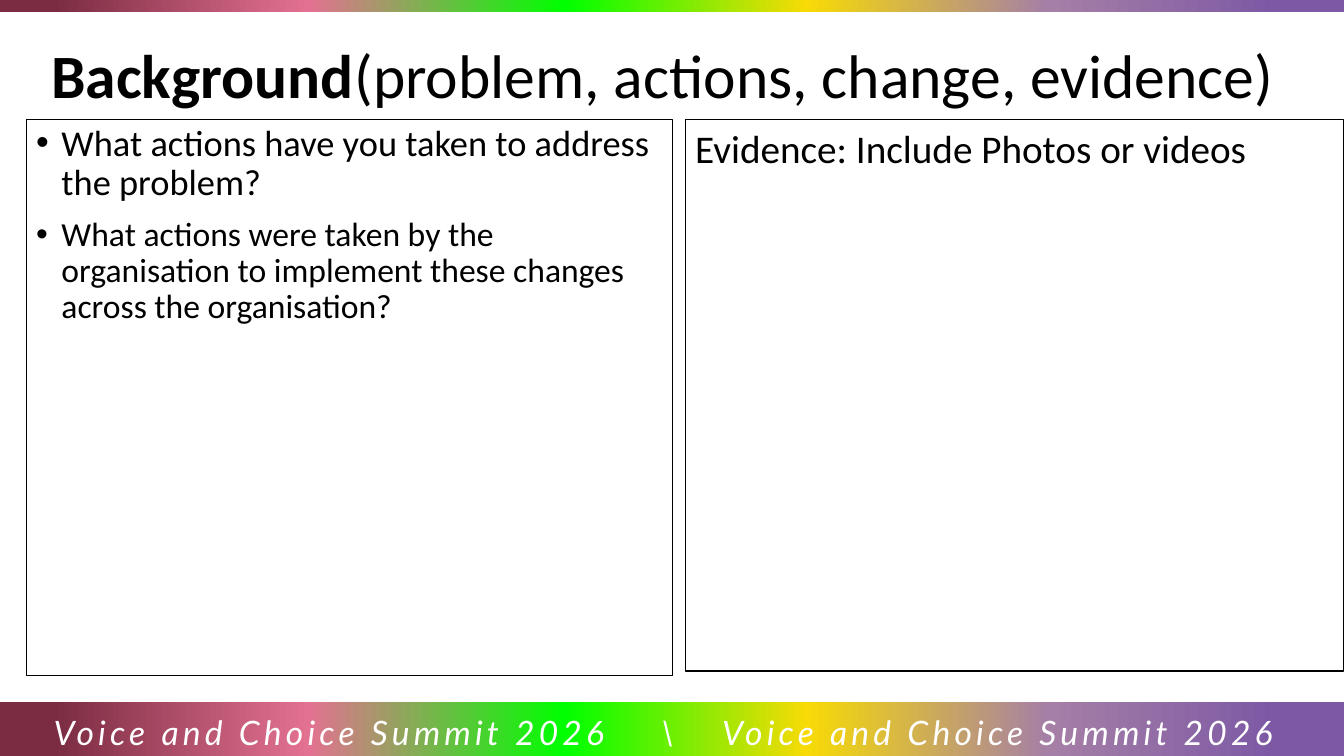
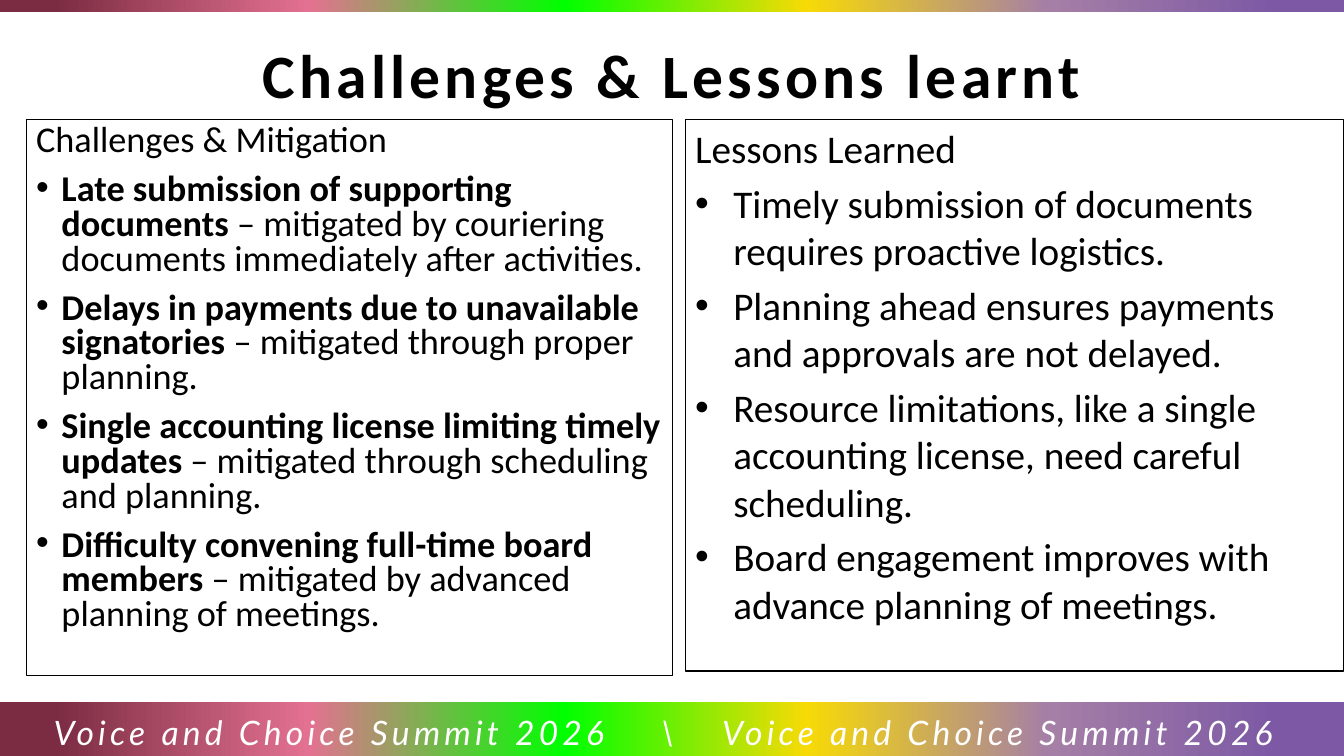
from dataclasses import dataclass

import pptx
import pptx.dml.color
import pptx.enum.shapes
import pptx.enum.text
import pptx.oxml.ns
import pptx.util
from lxml import etree
from pptx.util import Cm

COLOURS = {
    "text": "000000",
    "footer": "FFFFFF",
    "purple": "7D59A5",
    "mauve": "A57FA6",
    "yellow": "F7DA06",
    "green": "00FF00",
    "pink": "E37191",
    "maroon": "7B2C42",
}
BAND_STOPS = ((5, "purple"), (22, "mauve"), (40, "yellow"),
              (58, "green"), (77, "pink"), (96, "maroon"))
BODY_FONT = "Calibri"
FOOTER_FONT = "Lato"
FOOTER_TEXT = "Voice and Choice Summit 2026"
SLIDE_WIDTH = Cm(33.87)
SLIDE_HEIGHT = Cm(19.05)
PANEL_TOP = Cm(3.02)


@dataclass(frozen=True)
class TextRun:
    text: str
    bold: bool = False


@dataclass(frozen=True)
class Item:
    runs: tuple[TextRun, ...]
    size: float
    bullet: bool = True


@dataclass(frozen=True)
class Panel:
    left: Cm
    width: Cm
    height: Cm
    hanging: Cm
    space_before: float


@dataclass(frozen=True)
class PageContent:
    title: tuple[TextRun, ...]
    left_items: tuple[Item, ...]
    right_items: tuple[Item, ...]
    left_line_spacing: float
    title_spacing: float = 0
    title_right_inset: Cm = Cm(0.25)


LEFT_PANEL = Panel(Cm(0.66), Cm(16.28), Cm(14), Cm(0.64), 10)
RIGHT_PANEL = Panel(Cm(17.27), Cm(16.59), Cm(13.89), Cm(0.96), 5.6)


def plain(text: str, size: float, bullet: bool = True) -> Item:
    return Item((TextRun(text),), size, bullet)


def challenge(problem: str, mitigation: str) -> Item:
    return Item((TextRun(problem, True), TextRun(f" – mitigated {mitigation}")), 25.9)


PAGES = (
    PageContent(
        title=(TextRun("Background", True),
               TextRun("(problem, actions, change, evidence)")),
        left_items=(
            plain("What actions have you taken to address the problem?", 26),
            plain("What actions were taken by the organisation to implement "
                  "these changes across the organisation?", 24),
        ),
        right_items=(plain("Evidence: Include Photos or videos", 28, False),),
        left_line_spacing=0.9,
        title_right_inset=Cm(0.7),
    ),
    PageContent(
        title=(TextRun("Challenges & Lessons learnt", True),),
        left_items=(
            plain("Challenges & Mitigation", 25.9, False),
            challenge("Late submission of supporting documents",
                      "by couriering documents immediately after activities."),
            challenge("Delays in payments due to unavailable signatories",
                      "through proper planning."),
            challenge("Single accounting license limiting timely updates",
                      "through scheduling and planning."),
            challenge("Difficulty convening full-time board members",
                      "by advanced planning of meetings."),
        ),
        right_items=(
            plain("Lessons Learned", 28, False),
            plain("Timely submission of documents requires proactive logistics.", 28),
            plain("Planning ahead ensures payments and approvals are not delayed.", 28),
            plain("Resource limitations, like a single accounting license, "
                  "need careful scheduling.", 28),
            plain("Board engagement improves with advance planning of meetings.", 28),
        ),
        left_line_spacing=0.8,
        title_spacing=3,
    ),
)


def colour(name: str) -> pptx.dml.color.RGBColor:
    return pptx.dml.color.RGBColor.from_string(COLOURS[name])


def add_element(parent, tag: str, **attributes):
    element = etree.SubElement(parent, pptx.oxml.ns.qn(tag))
    for name, value in attributes.items():
        element.set(name, str(value))
    return element


def add_run(paragraph, text: str, size: float, font: str = BODY_FONT,
            color: str = "text", bold: bool = False, italic: bool = False,
            spacing: float = 0):
    run = paragraph.add_run()
    run.text = text
    run.font.name = font
    run.font.size = pptx.util.Pt(size)
    run.font.bold = bold
    run.font.italic = italic
    run.font.color.rgb = colour(color)
    if spacing:
        run.font._element.set("spc", str(int(spacing * 100)))
    return run


def outline_run(run) -> None:
    properties = run.font._element
    line = add_element(properties, "a:ln", w=pptx.util.Pt(0.75))
    fill = add_element(line, "a:solidFill")
    add_element(fill, "a:srgbClr", val=COLOURS["text"])
    properties.insert(0, line)


def add_rectangle(slide, left, top, width, height):
    shape = slide.shapes.add_shape(
        pptx.enum.shapes.MSO_SHAPE.RECTANGLE, left, top, width, height)
    shape.shadow.inherit = False
    return shape


# Gradient bands at the top and bottom edges
def add_band(slide, top: Cm, height: Cm) -> None:
    band = add_rectangle(slide, 0, top, SLIDE_WIDTH, height)
    band.line.fill.background()
    band.fill.gradient()
    band.fill.gradient_angle = 180
    stops = next(band.element.iter(pptx.oxml.ns.qn("a:gsLst")))
    for stop in list(stops):
        stops.remove(stop)
    for position, name in BAND_STOPS:
        stop = add_element(stops, "a:gs", pos=position * 1000)
        add_element(stop, "a:srgbClr", val=COLOURS[name])


def add_title(slide, page: PageContent) -> None:
    box = slide.shapes.add_textbox(0, Cm(0.69), SLIDE_WIDTH, Cm(2.34))
    frame = box.text_frame
    frame.word_wrap = True
    frame.margin_right = page.title_right_inset
    frame.vertical_anchor = pptx.enum.text.MSO_ANCHOR.MIDDLE
    paragraph = frame.paragraphs[0]
    paragraph.alignment = pptx.enum.text.PP_ALIGN.CENTER
    for part in page.title:
        run = add_run(paragraph, part.text, 44, bold=part.bold,
                      spacing=page.title_spacing)
        if page.title_spacing:
            outline_run(run)


# Footer: the slogan twice, spaced by tab stops around a backslash
def add_footer(slide) -> None:
    box = slide.shapes.add_textbox(0, Cm(17.75), SLIDE_WIDTH, Cm(1.24))
    frame = box.text_frame
    frame.word_wrap = True
    frame.margin_left = Cm(1.35)
    paragraph = frame.paragraphs[0]
    paragraph.line_spacing = 1.07
    tabs = add_element(paragraph._p.get_or_add_pPr(), "a:tabLst")
    for position in (Cm(15.3), Cm(16.85)):
        add_element(tabs, "a:tab", pos=int(position), algn="l")
    add_run(paragraph, f"{FOOTER_TEXT}\t\\\t{FOOTER_TEXT}", 24, FOOTER_FONT,
            "footer", italic=True, spacing=3)


def add_panel(slide, panel: Panel, items: tuple[Item, ...],
              line_spacing: float = 1.0) -> None:
    shape = add_rectangle(slide, panel.left, PANEL_TOP, panel.width, panel.height)
    shape.fill.background()
    shape.line.color.rgb = colour("text")
    shape.line.width = pptx.util.Pt(0.75)
    frame = shape.text_frame
    frame.word_wrap = True
    frame.vertical_anchor = pptx.enum.text.MSO_ANCHOR.TOP
    for index, item in enumerate(items):
        paragraph = frame.add_paragraph() if index else frame.paragraphs[0]
        paragraph.alignment = pptx.enum.text.PP_ALIGN.LEFT
        paragraph.line_spacing = line_spacing
        paragraph.space_before = pptx.util.Pt(panel.space_before if index else 0)
        if item.bullet:
            properties = paragraph._p.get_or_add_pPr()
            properties.set("marL", str(int(panel.hanging)))
            properties.set("indent", str(-int(panel.hanging)))
            add_element(properties, "a:buFont", typeface="Arial")
            add_element(properties, "a:buChar", char="•")
        for part in item.runs:
            add_run(paragraph, part.text, item.size, bold=part.bold)


def add_page(presentation, page: PageContent) -> None:
    slide = presentation.slides.add_slide(presentation.slide_layouts[6])
    add_band(slide, Cm(0), Cm(0.3))
    add_band(slide, Cm(17.68), Cm(1.45))
    add_title(slide, page)
    add_panel(slide, RIGHT_PANEL, page.right_items)
    add_footer(slide)
    add_panel(slide, LEFT_PANEL, page.left_items, page.left_line_spacing)


def main() -> None:
    presentation = pptx.Presentation()
    presentation.slide_width = SLIDE_WIDTH
    presentation.slide_height = SLIDE_HEIGHT
    for page in PAGES:
        add_page(presentation, page)
    presentation.save("out.pptx")


if __name__ == "__main__":
    main()
